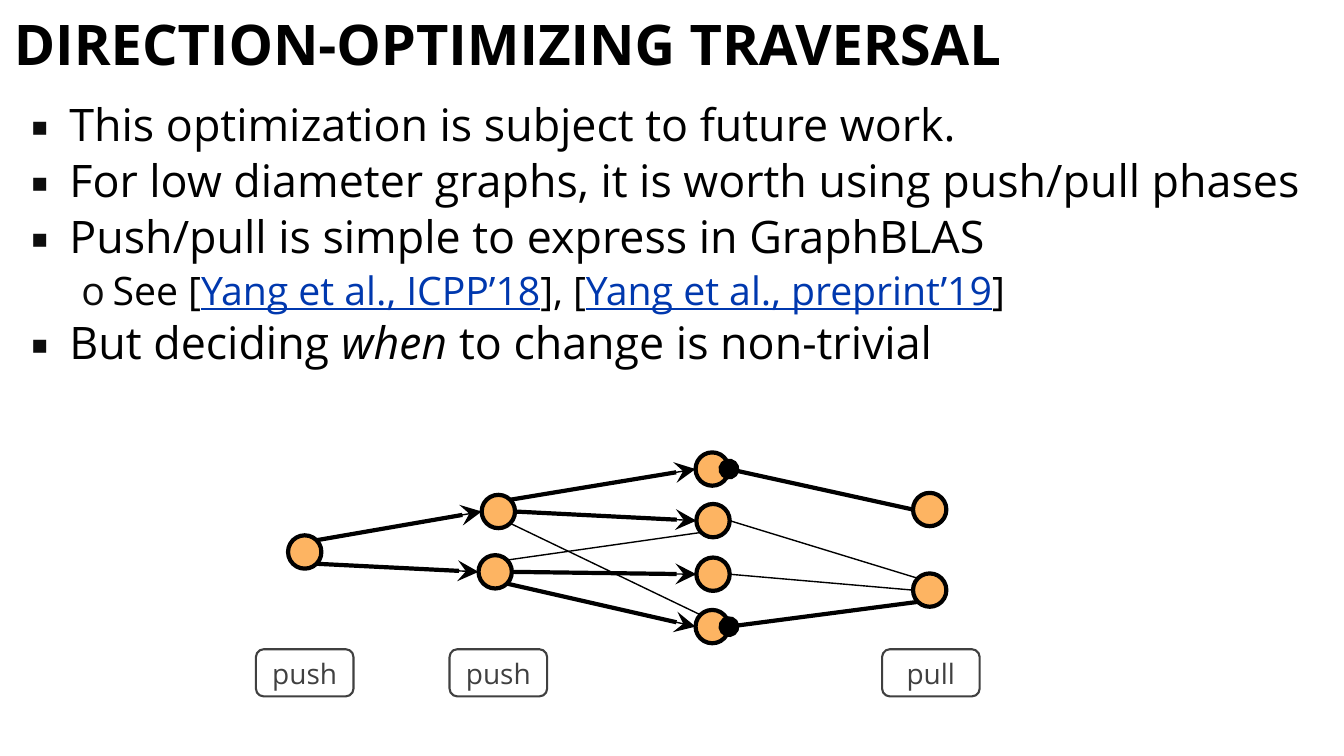
from math import cos, radians, sin
from lxml.etree import SubElement
from pptx import Presentation
from pptx.dml.color import RGBColor
from pptx.enum.shapes import MSO_CONNECTOR, MSO_SHAPE
from pptx.enum.text import MSO_ANCHOR, PP_ALIGN
from pptx.oxml.ns import qn
from pptx.util import Cm, Pt

theme = {
    "font": "Open Sans",
    "ink": RGBColor.from_string("000000"),
    "node": RGBColor.from_string("FDB462"),
    "link": RGBColor.from_string("0038AE"),
    "gray": RGBColor.from_string("404040"),
    "mark": "0D0D0D",
    "title": Pt(40),
    "body": [Pt(32), Pt(28)],
    "label": Pt(20),
}

deck = Presentation()
deck.slide_width, deck.slide_height = Cm(33.87), Cm(19.05)
slide = deck.slides.add_slide(deck.slide_layouts[6])
shapes = slide.shapes

radius = 0.42
nodes = {
    "a": (7.68, 13.91),
    "b": (12.56, 12.89), "c": (12.48, 14.41),
    "d": (17.95, 11.82), "e": (17.97, 13.12),
    "f": (17.97, 14.47), "g": (17.95, 15.79),
    "h": (23.43, 12.84), "i": (23.43, 14.87),
}
edges = [
    ("a", -45, "b", 180, "push"), ("a", 45, "c", 180, "push"),
    ("c", 0, "f", 180, "push"), ("g", 0, "i", 135, "pull"),
    ("f", 0, "i", 180, None), ("e", 0, "i", 225, None),
    ("d", 0, "h", 180, "pull"), ("c", -45, "e", 135, None),
    ("b", -45, "d", 180, "push"), ("b", 0, "e", 180, "push"),
    ("c", 45, "g", 180, "push"), ("b", 45, "g", 225, None),
]
ends = {"push": ("a:tailEnd", "stealth"), "pull": ("a:headEnd", "oval")}


def draw_edge(edge, width, end=None):
    spots = []
    for name, angle in (edge[:2], edge[2:4]):
        x, y = nodes[name]
        turn = radians(angle)
        spots += [Cm(x + radius * cos(turn)), Cm(y + radius * sin(turn))]
    line = shapes.add_connector(MSO_CONNECTOR.STRAIGHT, *spots)
    line.line.color.rgb = theme["ink"]
    line.line.width = Pt(width)
    if end:
        tag, kind = end
        SubElement(line.line._get_or_add_ln(), qn(tag), type=kind, w="lg", len="lg")
    SubElement(line._element.spPr, qn("a:effectLst"))


def draw_node(name):
    x, y = nodes[name]
    node = shapes.add_shape(MSO_SHAPE.OVAL, Cm(x - radius), Cm(y - radius),
                            Cm(2 * radius), Cm(2 * radius))
    node.shadow.inherit = False
    node.fill.solid()
    node.fill.fore_color.rgb = theme["node"]
    node.line.color.rgb = theme["ink"]
    node.line.width = Pt(3)


for edge in edges:
    draw_edge(edge, 1)

title = shapes.add_textbox(Cm(0.1), Cm(0.15), Cm(33.77), Cm(2.11)).text_frame
title.word_wrap = True
title.vertical_anchor = MSO_ANCHOR.MIDDLE
head = title.paragraphs[0]
head.text = "DIRECTION-OPTIMIZING TRAVERSAL"
head.line_spacing = 0.9
head.font.name, head.font.size = theme["font"], theme["title"]
head.font.bold = True
head.font.color.rgb = theme["ink"]

points = [
    (0, [("This optimization is subject to future work.", "")]),
    (0, [("For low diameter graphs, it is worth using push/pull phases", "")]),
    (0, [("Push/pull is simple to express in GraphBLAS", "")]),
    (1, [("See [", ""), ("Yang et al., ICPP’18", "link"), ("], [", ""),
         ("Yang et al., preprint’19", "link"), ("]", "")]),
    (0, [("But deciding ", ""), ("when", "italic"),
         (" to change is non-trivial", "")]),
]
marks = [("▪", 0.97, 0.97), ("o", 2.06, 0.79)]
body = shapes.add_textbox(Cm(0.53), Cm(2.39), Cm(33.33), Cm(6.5)).text_frame
body.word_wrap = True
body.margin_top = Cm(0.21)
for order, (level, parts) in enumerate(points):
    para = body.add_paragraph() if order else body.paragraphs[0]
    para.level = level
    para.line_spacing = 0.9
    para.space_before = Pt(5.4 if order else 0)
    mark, left, hang = marks[level]
    props = para._p.get_or_add_pPr()
    props.set("marL", str(Cm(left)))
    props.set("indent", str(-Cm(hang)))
    SubElement(SubElement(props, qn("a:buClr")), qn("a:srgbClr"), val=theme["mark"])
    SubElement(props, qn("a:buFont"), typeface=theme["font"])
    SubElement(props, qn("a:buChar"), char=mark)
    para.font.name, para.font.size = theme["font"], theme["body"][level]
    for text, style in parts:
        run = para.add_run()
        run.text = text
        run.font.color.rgb = theme["link" if style == "link" else "ink"]
        if style == "link":
            run.font.underline = True
        if style == "italic":
            run.font.italic = True

for name in "abcdefg":
    draw_node(name)
for edge in edges:
    if edge[4]:
        draw_edge(edge, 3, ends[edge[4]])

for text, left in (("push", 6.45), ("push", 11.33), ("pull", 22.23)):
    label = shapes.add_shape(MSO_SHAPE.ROUNDED_RECTANGLE, Cm(left), Cm(16.36),
                             Cm(2.46), Cm(1.19))
    label.shadow.inherit = False
    label.fill.background()
    label.line.color.rgb = theme["gray"]
    label.line.width = Pt(1.5)
    frame = label.text_frame
    frame.word_wrap = False
    frame.vertical_anchor = MSO_ANCHOR.MIDDLE
    para = frame.paragraphs[0]
    para.text = text
    para.alignment = PP_ALIGN.CENTER
    para.font.name, para.font.size = theme["font"], theme["label"]
    para.font.color.rgb = theme["gray"]

for name in "hi":
    draw_node(name)

deck.save("out.pptx")
